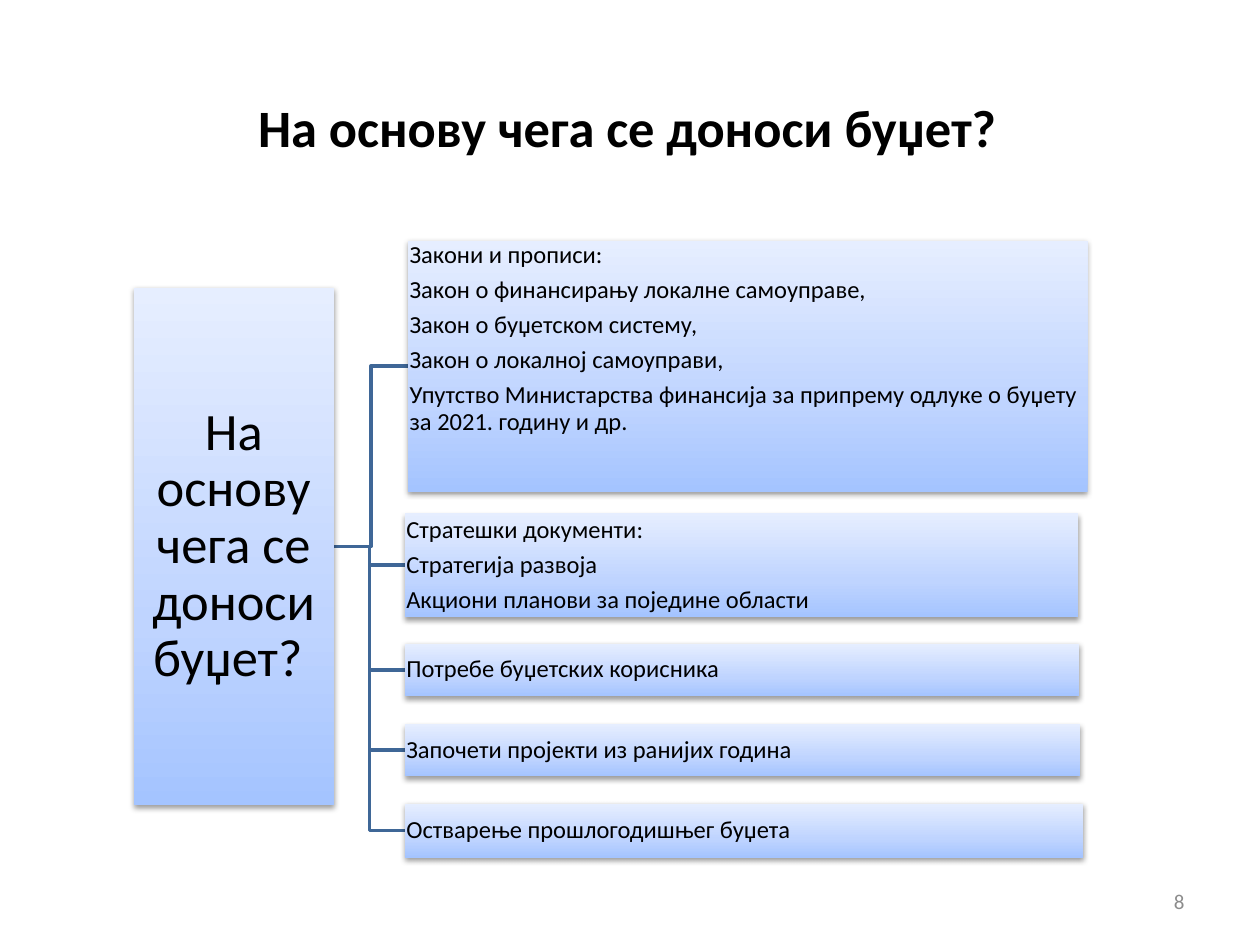
import copy
from dataclasses import dataclass

import pptx
import pptx.dml.color
import pptx.enum.shapes
import pptx.enum.text
import pptx.oxml
import pptx.oxml.ns
import pptx.util

Pt = pptx.util.Pt
RGB = pptx.dml.color.RGBColor
Align = pptx.enum.text.PP_ALIGN
Anchor = pptx.enum.text.MSO_ANCHOR
qn = pptx.oxml.ns.qn

FONT = "Calibri"
BLACK = RGB(0, 0, 0)
GREY = RGB(0x8C, 0x8C, 0x8C)
LINE = RGB(0x3F, 0x67, 0x97)
BLEND = (
    (0, RGB(0xA4, 0xC4, 0xFF)),
    (0.35, RGB(0xBF, 0xD4, 0xFF)),
    (1, RGB(0xE6, 0xEE, 0xFF)),
)
SHADE = (
    f'<a:outerShdw {pptx.oxml.ns.nsdecls("a")} blurRad="{Pt(3.1)}" dist="{Pt(1.6)}" '
    'dir="5400000" rotWithShape="0"><a:srgbClr val="000000">'
    '<a:alpha val="38000"/></a:srgbClr></a:outerShdw>'
)


@dataclass
class Box:
    left: float
    top: float
    width: float
    height: float
    lines: tuple[str, ...]
    size: float = 14
    inset: float = 0.9
    align: Align = Align.LEFT
    anchor: Anchor = Anchor.MIDDLE

    @property
    def right(self) -> float:
        return self.left + self.width

    @property
    def mid(self) -> float:
        return self.top + self.height / 2


ROOT = Box(76.3, 164.4, 114.5, 295.7, ("На основу чега се доноси буџет? ",),
           size=30, inset=1.5, align=Align.CENTER)
ITEMS = (
    Box(233.2, 137.5, 388.3, 143.5, (
        "Закони и прописи:",
        "Закон о финансирању локалне самоуправе,",
        "Закон о буџетском систему,",
        "Закон о локалној самоуправи,",
        "Упутство Министарства финансија за припрему одлуке о буџету за 2021. годину и др.",
    ), anchor=Anchor.TOP),
    Box(231.3, 293.2, 385, 59.5, (
        "Стратешки документи:",
        "Стратегија развоја",
        "Акциони планови за поједине области",
    )),
    Box(231.3, 367.8, 385.3, 30, ("Потребе буџетских корисника",)),
    Box(231.3, 413.7, 386, 30, ("Започети пројекти из ранијих година",)),
    Box(231.3, 459.2, 387.5, 31, ("Остварење прошлогодишњег буџета",)),
)


def style(para, size: float, color: RGB, align: Align, bold: bool = False) -> None:
    para.alignment = align
    font = para.font
    font.name, font.size, font.bold = FONT, Pt(size), bold
    font.color.rgb = color


def blend(shape) -> None:
    """Fill with the three-stop gradient, light at the top."""
    shape.fill.gradient()
    shape.fill.gradient_angle = 90
    stops = shape.element.spPr.find(".//" + qn("a:gsLst"))
    stops.append(copy.deepcopy(stops[-1]))
    for stop, (pos, color) in zip(shape.fill.gradient_stops, BLEND):
        stop.position = pos
        stop.color.rgb = color


def draw_box(slide, box: Box) -> None:
    shape = slide.shapes.add_shape(
        pptx.enum.shapes.MSO_SHAPE.RECTANGLE,
        Pt(box.left), Pt(box.top), Pt(box.width), Pt(box.height))
    blend(shape)
    shape.line.fill.background()
    shape.shadow.inherit = False
    shadow = shape.element.spPr.find(qn("a:effectLst"))
    shadow.append(pptx.oxml.parse_xml(SHADE))

    frame = shape.text_frame
    frame.word_wrap = True
    frame.vertical_anchor = box.anchor
    frame.margin_left = frame.margin_right = Pt(box.inset)
    frame.margin_top = frame.margin_bottom = Pt(box.inset)
    frame.text = "\n".join(box.lines)
    for para in frame.paragraphs:
        style(para, box.size, BLACK, box.align)
        para.line_spacing = 0.9
        para.space_after = Pt(box.size * 0.35)


def draw_branch(slide, start: Box, end: Box) -> None:
    """Draw a bent line from the right of one box to the left of another."""
    bend = (start.right + end.left) / 2
    pen = slide.shapes.build_freeform(Pt(start.right), Pt(start.mid))
    turns = ((bend, start.mid), (bend, end.mid), (end.left, end.mid))
    pen.add_line_segments([(Pt(x), Pt(y)) for x, y in turns], close=False)
    shape = pen.convert_to_shape()
    shape.fill.background()
    shape.line.color.rgb = LINE
    shape.line.width = Pt(2)
    shape.shadow.inherit = False


def draw_title(slide, text: str) -> None:
    title = slide.shapes.title
    title.left, title.top, title.width, title.height = Pt(34.5), Pt(39), Pt(648), Pt(67)
    title.text_frame.text = text
    title.text_frame.vertical_anchor = Anchor.MIDDLE
    style(title.text_frame.paragraphs[0], 30, BLACK, Align.CENTER, bold=True)


def draw_number(slide, text: str) -> None:
    frame = slide.shapes.add_textbox(Pt(516), Pt(500.5), Pt(168), Pt(28.75)).text_frame
    frame.word_wrap = True
    frame.vertical_anchor = Anchor.MIDDLE
    frame.text = text
    style(frame.paragraphs[0], 12, GREY, Align.RIGHT)


def main() -> None:
    deck = pptx.Presentation()
    deck.slide_width, deck.slide_height = Pt(720), Pt(540)
    slide = deck.slides.add_slide(deck.slide_layouts.get_by_name("Title Only"))
    draw_title(slide, "На основу чега се доноси буџет?")
    draw_number(slide, "8")
    for item in reversed(ITEMS):
        draw_branch(slide, ROOT, item)
    for box in (ROOT, *ITEMS):
        draw_box(slide, box)
    deck.save("out.pptx")


if __name__ == "__main__":
    main()
